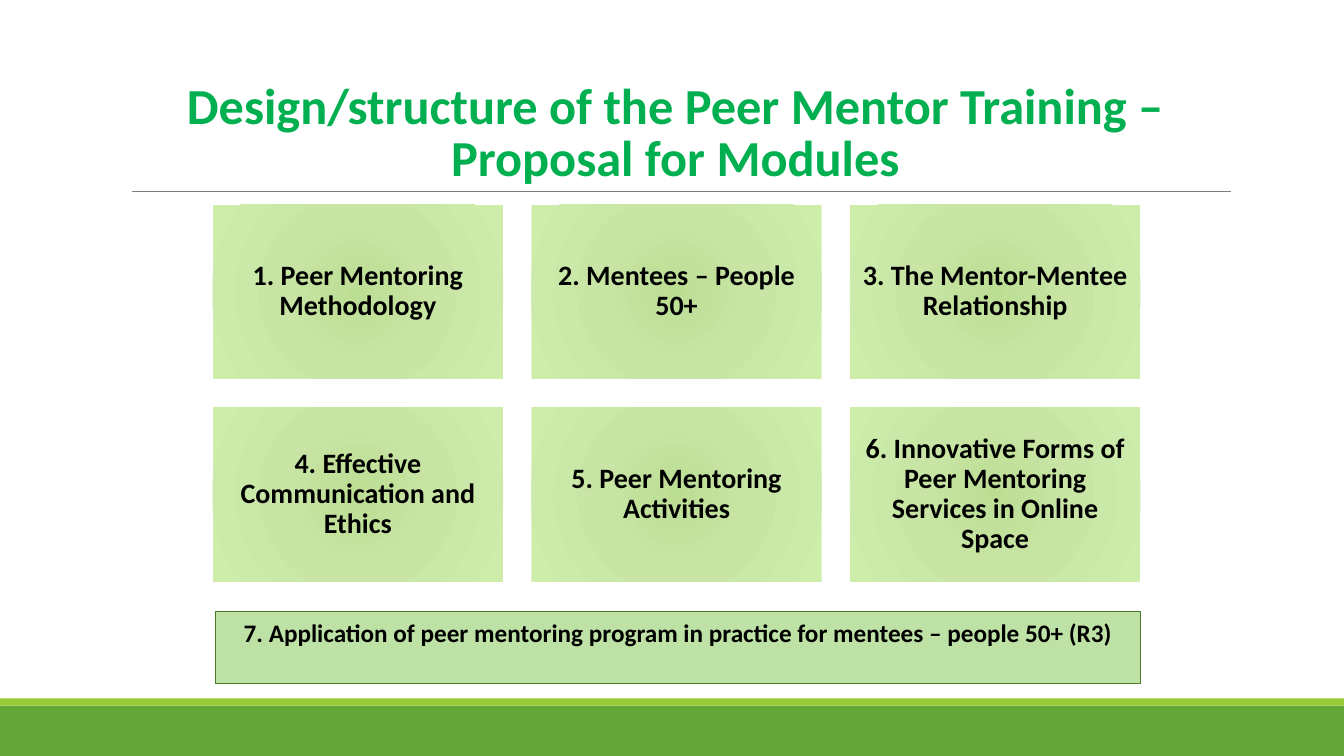
from dataclasses import dataclass

from pptx import Presentation
from pptx.dml.color import RGBColor
from pptx.enum.shapes import MSO_CONNECTOR, MSO_SHAPE
from pptx.enum.text import MSO_ANCHOR, MSO_AUTO_SIZE, PP_ALIGN
from pptx.oxml import parse_xml
from pptx.oxml.ns import nsdecls, qn
from pptx.shapes.autoshape import Shape
from pptx.slide import Slide
from pptx.util import Inches, Pt

RECTANGLE = MSO_SHAPE.RECTANGLE
STRAIGHT = MSO_CONNECTOR.STRAIGHT
CENTER = PP_ALIGN.CENTER
TOP, MIDDLE, BOTTOM = MSO_ANCHOR.TOP, MSO_ANCHOR.MIDDLE, MSO_ANCHOR.BOTTOM
NO_AUTOFIT = MSO_AUTO_SIZE.NONE
TITLE_ONLY_LAYOUT = 5

SLIDE_WIDTH, SLIDE_HEIGHT = 13.33, 7.5
FONT = "Calibri"
CARD_STOPS = ((0, "BCDE93"), (45, "C8E5A5"), (100, "CEEDAB"))
CARD_COLUMNS = 3
CARD_LEFT, CARD_TOP = 2.11, 2.03
CARD_WIDTH, CARD_HEIGHT = 2.88, 1.73
CARD_STEP_X, CARD_STEP_Y = 3.16, 2.01

MODULES = (
    "1. Peer Mentoring Methodology",
    "2. Mentees – People 50+",
    "3. The Mentor-Mentee Relationship",
    "4. Effective Communication and Ethics",
    "5. Peer Mentoring Activities",
    "6. Innovative Forms of Peer Mentoring Services in Online Space",
)


@dataclass(frozen=True)
class Box:
    left: float
    top: float
    width: float
    height: float


@dataclass(frozen=True)
class TextStyle:
    size: int
    color: str
    anchor: MSO_ANCHOR
    line_spacing: float = 1.0
    margin_x: float = 0.1
    margin_y: float = 0.05


TITLE_STYLE = TextStyle(36, "00B050", BOTTOM, 0.85)
CARD_STYLE = TextStyle(20, "000000", MIDDLE, 0.9, 0.08, 0.08)
BANNER_STYLE = TextStyle(18, "000000", TOP)


def rgb(color: str) -> RGBColor:
    return RGBColor.from_string(color)


def write_text(shape: Shape, text: str, style: TextStyle) -> None:
    frame = shape.text_frame
    frame.text = text
    frame.word_wrap = True
    frame.auto_size = NO_AUTOFIT
    frame.vertical_anchor = style.anchor
    frame.margin_left = frame.margin_right = Inches(style.margin_x)
    frame.margin_top = frame.margin_bottom = Inches(style.margin_y)
    paragraph = frame.paragraphs[0]
    paragraph.alignment = CENTER
    paragraph.line_spacing = style.line_spacing
    paragraph.font.name = FONT
    paragraph.font.size = Pt(style.size)
    paragraph.font.bold = True
    paragraph.font.color.rgb = rgb(style.color)


def add_rectangle(slide: Slide, box: Box) -> Shape:
    """Add a rectangle without shadow or outline."""
    shape = slide.shapes.add_shape(
        RECTANGLE, Inches(box.left), Inches(box.top), Inches(box.width), Inches(box.height)
    )
    shape.shadow.inherit = False
    shape.line.fill.background()
    return shape


def add_filled_rectangle(slide: Slide, box: Box, color: str) -> Shape:
    shape = add_rectangle(slide, box)
    shape.fill.solid()
    shape.fill.fore_color.rgb = rgb(color)
    return shape


def fill_radially(shape: Shape, stops: tuple[tuple[int, str], ...]) -> None:
    """Fill from the centre outwards; stop positions are percentages."""
    stop_list = "".join(
        f'<a:gs pos="{position * 1000}"><a:srgbClr val="{color}"/></a:gs>'
        for position, color in stops
    )
    gradient = parse_xml(
        f'<a:gradFill {nsdecls("a")} rotWithShape="1"><a:gsLst>{stop_list}</a:gsLst>'
        '<a:path path="circle"><a:fillToRect l="50000" t="50000" r="50000" b="50000"/>'
        "</a:path></a:gradFill>"
    )
    shape._element.spPr.find(qn("a:prstGeom")).addnext(gradient)


def add_title(slide: Slide) -> None:
    title = slide.shapes.title
    title.left, title.top = Inches(1.2), Inches(0.31)
    title.width, title.height = Inches(11), Inches(1.59)
    write_text(
        title, "Design/structure of the Peer Mentor Training – Proposal for Modules", TITLE_STYLE
    )


def add_title_rule(slide: Slide) -> None:
    rule = slide.shapes.add_connector(
        STRAIGHT, Inches(1.31), Inches(1.9), Inches(12.21), Inches(1.9)
    )
    rule.line.color.rgb = rgb("7F7F7F")
    rule.line.width = Pt(0.75)
    rule._element.spPr.append(parse_xml(f'<a:effectLst {nsdecls("a")}/>'))


def add_module_cards(slide: Slide) -> None:
    for index, module in enumerate(MODULES):
        row, column = divmod(index, CARD_COLUMNS)
        left = CARD_LEFT + column * CARD_STEP_X
        top = CARD_TOP + row * CARD_STEP_Y
        card = add_rectangle(slide, Box(left, top, CARD_WIDTH, CARD_HEIGHT))
        fill_radially(card, CARD_STOPS)
        write_text(card, module, CARD_STYLE)


def add_application_banner(slide: Slide) -> None:
    banner = add_filled_rectangle(slide, Box(2.14, 6.07, 9.17, 0.71), "BEE2A6")
    banner.line.color.rgb = rgb("4A7B29")
    banner.line.width = Pt(0.75)
    write_text(
        banner,
        "7. Application of peer mentoring program in practice for mentees – people 50+ (R3)",
        BANNER_STYLE,
    )


def main() -> None:
    presentation = Presentation()
    presentation.slide_width = Inches(SLIDE_WIDTH)
    presentation.slide_height = Inches(SLIDE_HEIGHT)
    slide = presentation.slides.add_slide(presentation.slide_layouts[TITLE_ONLY_LAYOUT])

    add_filled_rectangle(slide, Box(0, 7, SLIDE_WIDTH, 0.5), "63A537")
    add_filled_rectangle(slide, Box(0, 6.93, SLIDE_WIDTH, 0.07), "99CB38")
    add_title_rule(slide)
    add_title(slide)
    add_module_cards(slide)
    add_application_banner(slide)
    presentation.save("out.pptx")


if __name__ == "__main__":
    main()
